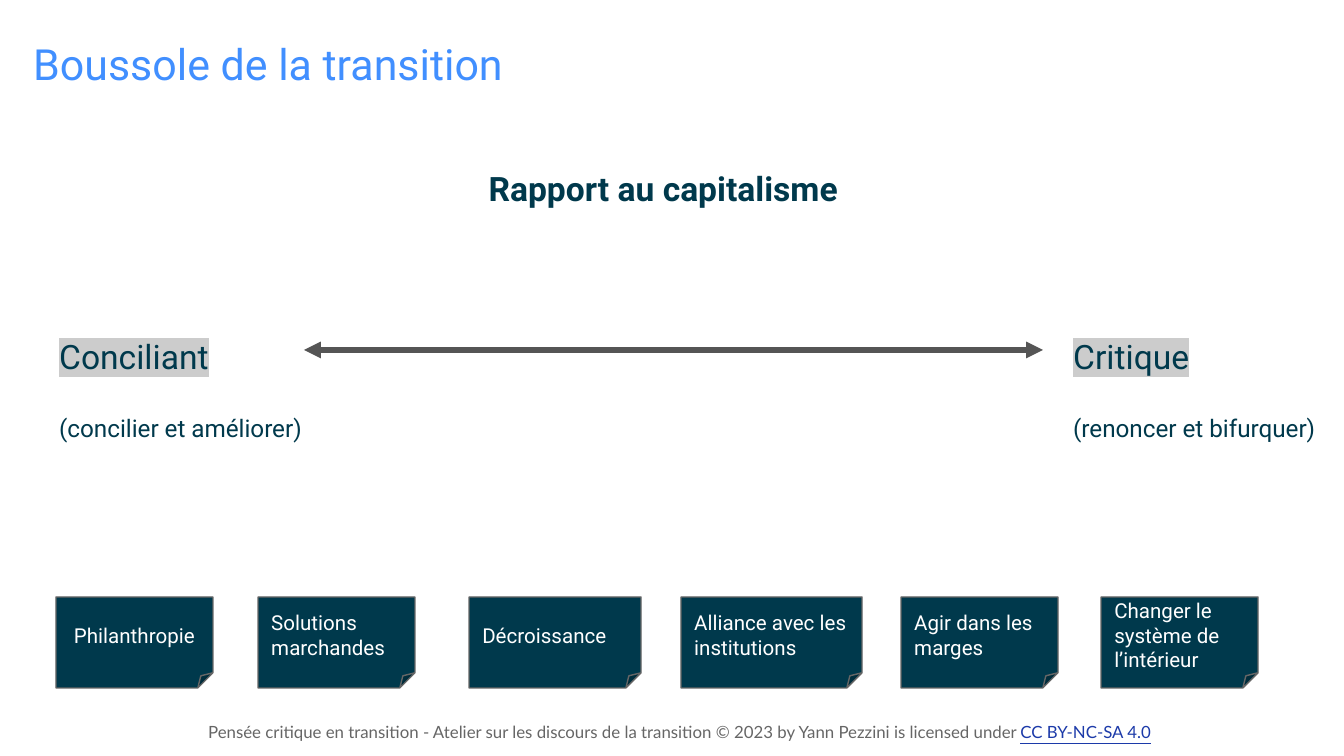
from lxml.etree import SubElement
from pptx import Presentation
from pptx.dml.color import RGBColor
from pptx.enum.shapes import MSO_CONNECTOR, MSO_SHAPE
from pptx.enum.text import MSO_ANCHOR, PP_ALIGN
from pptx.oxml import parse_xml
from pptx.oxml.ns import nsdecls, qn
from pptx.util import Pt

PX = 914400 / 134.4

NAVY = RGBColor(0x00, 0x39, 0x4C)
BLUE = RGBColor(0x41, 0x8F, 0xFF)
LINK_BLUE = RGBColor(0x1C, 0x3A, 0xA9)
GREY = RGBColor(0x66, 0x66, 0x66)
ARROW_GREY = RGBColor(0x55, 0x55, 0x55)
WHITE = RGBColor(0xFF, 0xFF, 0xFF)

deck = Presentation()
deck.slide_width = round(1344 * PX)
deck.slide_height = round(756 * PX)
page = deck.slides.add_slide(deck.slide_layouts[6])


def add_box(left, top, width, height):
    box = page.shapes.add_textbox(*(round(n * PX) for n in (left, top, width, height)))
    frame = box.text_frame
    frame.word_wrap = True
    frame.margin_top = frame.margin_bottom = frame.margin_left
    return frame


def add_span(para, text, size, color, font="Roboto"):
    span = para.add_run()
    span.text = text
    span.font.size = Pt(size)
    span.font.name = font
    span.font.color.rgb = color
    return span


# Footer with licence
para = add_box(195, 712, 1028, 82).paragraphs[0]
add_span(para, "Pensée critique en transition - Atelier sur les discours de la transition "
               "© 2023 by Yann Pezzini is licensed under ", 9, GREY, "Lato")
add_span(para, "CC BY-NC-SA 4.0", 9, LINK_BLUE, "Lato").font.underline = True

# Cards: left, width, text
cards = [
    (56, 157, "Philanthropie"),
    (258, 157, "Solutions marchandes"),
    (469, 172, "Décroissance"),
    (681, 181, "Alliance avec les institutions"),
    (901, 157, "Agir dans les marges"),
    (1101, 157, "Changer le système de l’intérieur"),
]
for left, width, text in cards:
    card = page.shapes.add_shape(MSO_SHAPE.FOLDED_CORNER,
                                 *(round(n * PX) for n in (left, 597, width, 91)))
    card.shadow.inherit = False
    card.fill.solid()
    card.fill.fore_color.rgb = NAVY
    card.line.color.rgb = GREY
    card.line.width = Pt(0.75)
    frame = card.text_frame
    frame.word_wrap = True
    frame.margin_top = frame.margin_bottom = frame.margin_left
    frame.vertical_anchor = MSO_ANCHOR.MIDDLE
    para = frame.paragraphs[0]
    para.alignment = PP_ALIGN.CENTER if text == "Philanthropie" else PP_ALIGN.LEFT
    add_span(para, text, 11, WHITE)

# Double-headed axis
axis = page.shapes.add_connector(MSO_CONNECTOR.STRAIGHT,
                                 *(round(n * PX) for n in (304, 350, 1043, 350)))
axis.line.color.rgb = ARROW_GREY
axis.line.width = Pt(3)
for end in ("a:headEnd", "a:tailEnd"):
    SubElement(axis.line._get_or_add_ln(), qn(end), type="triangle")
SubElement(axis._element.spPr, qn("a:effectLst"))

# Poles of the axis: left, width, name, explanation
poles = [
    (46, 273, "Conciliant", "(concilier et améliorer)"),
    (1060, 284, "Critique", "(renoncer et bifurquer)"),
]
for left, width, name, explanation in poles:
    frame = add_box(left, 316, width, 137)
    para = frame.paragraphs[0]
    para.line_spacing = 1.15
    span = add_span(para, name, 18, NAVY)
    highlight = parse_xml(f'<a:highlight {nsdecls("a")}><a:srgbClr val="CCCCCC"/></a:highlight>')
    span.font._element.find(qn("a:solidFill")).addnext(highlight)
    para = frame.add_paragraph()
    para.line_spacing = 1.15
    para.space_before = Pt(17.5)
    add_span(para, explanation, 13, NAVY)

# Axis heading
para = add_box(329, 148, 677, 67).paragraphs[0]
para.alignment = PP_ALIGN.CENTER
para.line_spacing = 1.15
add_span(para, "Rapport au capitalisme ", 18, NAVY).font.bold = True

# Slide title
para = add_box(20, 24, 556, 179).paragraphs[0]
add_span(para, "Boussole de la transition", 23, BLUE)

deck.save("out.pptx")
